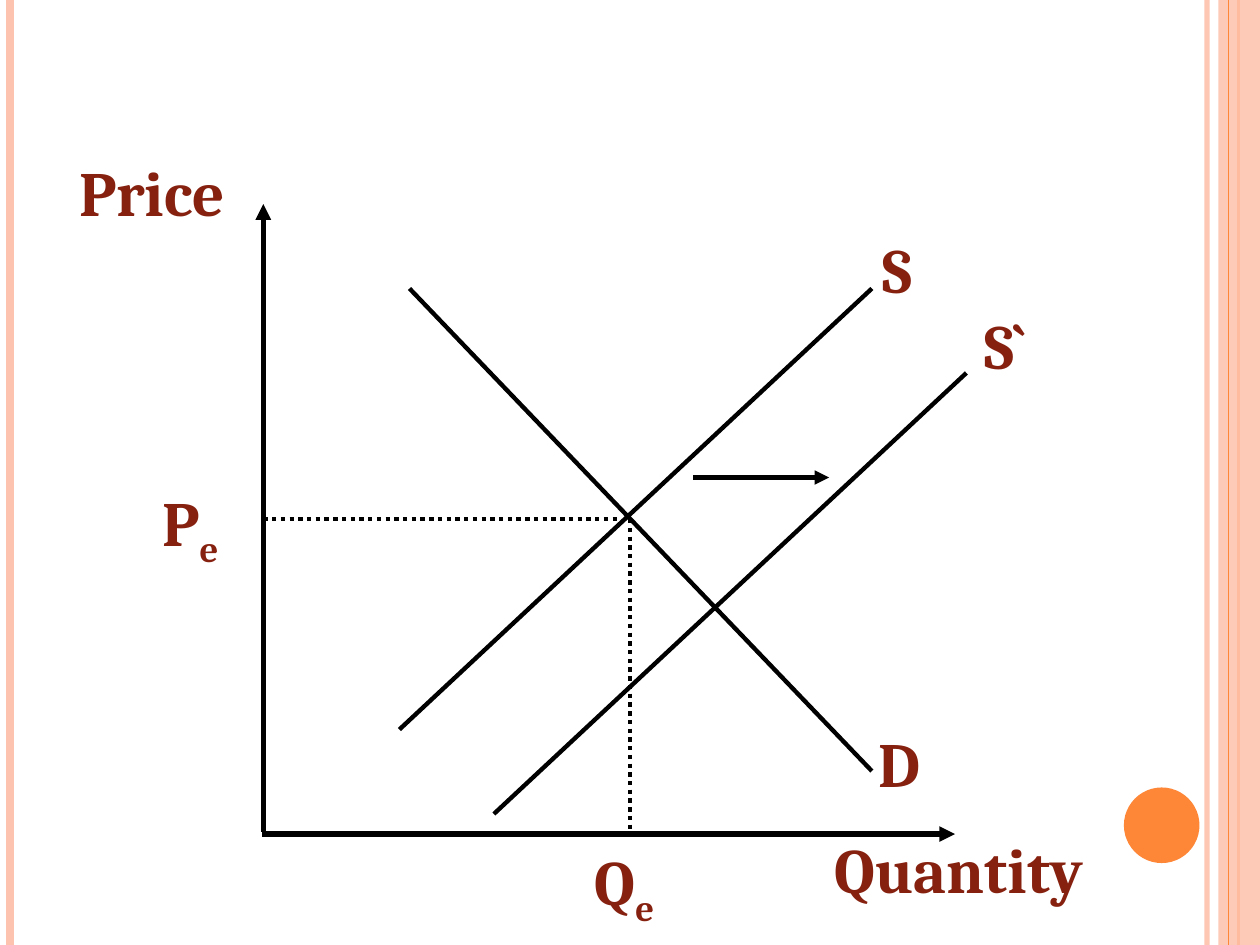
from lxml import etree
from pptx import Presentation
from pptx.dml.color import RGBColor
from pptx.enum import dml, shapes, text
from pptx.oxml.ns import qn
from pptx.util import Inches, Pt

INK, LABEL, PEACH, ORANGE = "000000", "862110", "FEC3AE", "FE8637"
SOLID, DOTTED = dml.MSO_LINE.SOLID, dml.MSO_LINE.ROUND_DOT

# Vertical rules of the frame: x, colour, width, opacity in percent
rules_below_band = [(9.58, PEACH, 3, 93), (0.08, PEACH, 4.5, 100), (9.83, ORANGE, 1.5, 100)]
rule_above_band = (9.75, ORANGE, 0.75, 100)

# Diagram lines: start, end, width, dash, has arrowhead
axes = [
    ((2.09, 6.6), (2.09, 1.62), 3, SOLID, True),
    ((2.08, 6.62), (7.58, 6.62), 3, SOLID, True),
]
supply_start, supply_end = (6.92, 2.29), (3.17, 5.79)
supply_shift = (0.75, 0.67)
shifted_supply = [tuple(a + d for a, d in zip(point, supply_shift))
                  for point in (supply_start, supply_end)]
curves = [
    (supply_start, supply_end, 2.5, SOLID, False),
    ((3.25, 2.29), (6.92, 6.12), 2.5, SOLID, False),
    (*shifted_supply, 2.5, SOLID, False),
]
equilibrium_guides = [
    ((5, 4.12), (5, 6.6), 2.5, DOTTED, False),
    ((2.09, 4.12), (4.92, 4.12), 2.5, DOTTED, False),
]
shift_arrow = [((5.5, 3.79), (6.58, 3.79), 2.75, SOLID, True)]

# Labels: text, subscript, left, top, width
labels = [
    ("Price", "", 0.5, 1.17, 1.41),
    ("S", "", 6.89, 1.78, 0.46),
    ("S`", "", 7.67, 2.38, 0.61),
    ("D", "", 6.86, 5.7, 0.56),
    ("Quantity", "", 6.5, 6.54, 2.22),
    ("P", "e", 1, 3.79, 1.02),
    ("Q", "e", 4.59, 6.64, 0.73),
]
LABEL_HEIGHT = 0.71


def rgb(colour):
    return RGBColor.from_string(colour)


def set_opacity(fill_parent, percent):
    if percent < 100:
        colour = next(fill_parent.iter(qn("a:srgbClr")))
        etree.SubElement(colour, qn("a:alpha"), val=str(percent * 1000))


def add_line(slide, start, end, width, dash=SOLID, arrow=False, colour=INK, opacity=100):
    line = slide.shapes.add_connector(
        shapes.MSO_CONNECTOR.STRAIGHT, *(Inches(v) for v in (*start, *end)))
    line.line.color.rgb = rgb(colour)
    line.line.width = Pt(width)
    line.line.dash_style = dash
    properties = line._element.spPr
    set_opacity(properties, opacity)
    if arrow:
        etree.SubElement(properties.find(qn("a:ln")), qn("a:tailEnd"), type="triangle")
    etree.SubElement(properties, qn("a:effectLst"))


def add_rule(slide, x, colour, width, opacity):
    add_line(slide, (x, 0), (x, 7.5), width, colour=colour, opacity=opacity)


def add_filled(slide, preset, box, colour, opacity=100):
    shape = slide.shapes.add_shape(preset, *(Inches(v) for v in box))
    shape.shadow.inherit = False
    shape.fill.solid()
    shape.fill.fore_color.rgb = rgb(colour)
    shape.line.fill.background()
    set_opacity(shape._element.spPr, opacity)


def add_label(slide, name, subscript, left, top, width):
    label = slide.shapes.add_textbox(
        *(Inches(v) for v in (left, top, width, LABEL_HEIGHT)))
    frame = label.text_frame
    frame.word_wrap = False
    frame.auto_size = text.MSO_AUTO_SIZE.SHAPE_TO_FIT_TEXT
    paragraph = frame.paragraphs[0]
    paragraph.alignment = text.PP_ALIGN.CENTER
    paragraph.text = name
    if subscript:
        lowered = paragraph.add_run()
        lowered.text = subscript
        lowered._r.get_or_add_rPr().set("baseline", "-25000")
    for run in paragraph.runs:
        run.font.name = "Cambria"
        run.font.size = Pt(36)
        run.font.bold = True
        run.font.color.rgb = rgb(LABEL)


def main():
    deck = Presentation()
    deck.slide_width, deck.slide_height = Inches(10), Inches(7.5)
    slide = deck.slides.add_slide(deck.slide_layouts[6])

    # Frame
    for rule in rules_below_band:
        add_rule(slide, *rule)
    add_filled(slide, shapes.MSO_SHAPE.RECTANGLE, (9.67, 0, 0.33, 7.5), PEACH, 87)
    add_rule(slide, *rule_above_band)
    add_filled(slide, shapes.MSO_SHAPE.OVAL, (8.92, 6.25, 0.6, 0.6), ORANGE)

    # Supply and demand diagram
    for line in axes + curves + equilibrium_guides + shift_arrow:
        add_line(slide, *line)
    for label in labels:
        add_label(slide, *label)

    deck.save("out.pptx")


if __name__ == "__main__":
    main()
